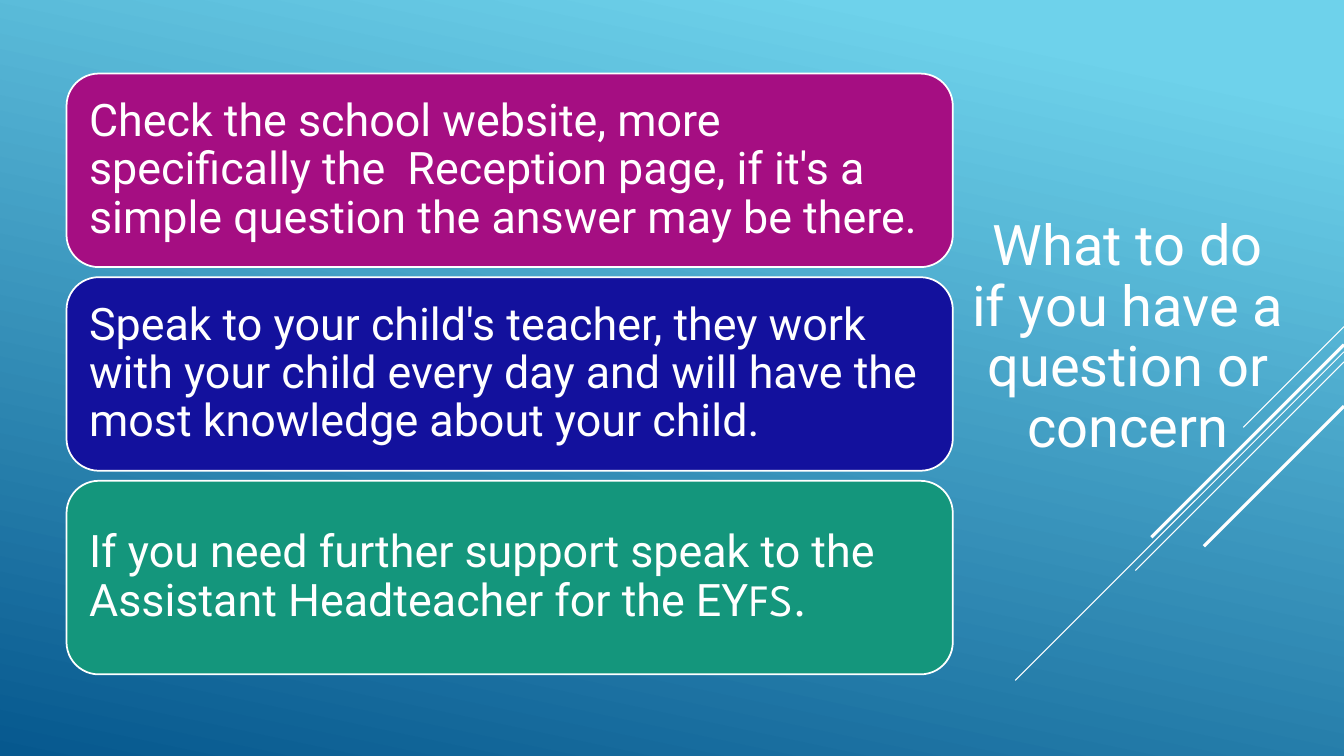
"""Build the slide on what to do with a question or concern."""
from dataclasses import dataclass

from lxml import etree
from pptx import Presentation
from pptx.dml.color import RGBColor
from pptx.enum.shapes import MSO_CONNECTOR, MSO_SHAPE
from pptx.enum.text import MSO_ANCHOR, PP_ALIGN
from pptx.oxml.ns import qn
from pptx.util import Inches, Pt

RECTANGLE = MSO_SHAPE.RECTANGLE
ROUNDED = MSO_SHAPE.ROUNDED_RECTANGLE
STRAIGHT = MSO_CONNECTOR.STRAIGHT
MIDDLE = MSO_ANCHOR.MIDDLE
LEFT, CENTER = PP_ALIGN.LEFT, PP_ALIGN.CENTER


@dataclass(frozen=True)
class Theme:
    """Colours, fonts and sizes of the slide."""
    sky: str = "6ED2EB"
    deep: str = "06588E"
    white: str = "FFFFFF"
    magenta: str = "A50E82"
    navy: str = "13119D"
    green: str = "14967C"
    font: str = "Roboto"
    accent_font: str = "League Spartan"
    title_size: int = 40
    step_size: int = 32
    outline: float = 1.25
    thin: float = 0.75
    thick: float = 2.25


THEME = Theme()
SLIDE_WIDTH, SLIDE_HEIGHT = 13.33, 7.5
STEP_LEFT, STEP_TOP, STEP_WIDTH, STEP_HEIGHT = 0.66, 0.73, 8.79, 1.92
STEP_PITCH = 2.02
TITLE = "What to do if you have a question or concern"
STEPS = [
    (THEME.magenta, "Check the school website, more specifically the  Reception page, "
     "if it's a simple question the answer may be there.", ""),
    (THEME.navy, "Speak to your child's teacher, they work with your child every day "
     "and will have the most knowledge about your child.", ""),
    (THEME.green, "If you need further support speak to the Assistant Headteacher "
     "for the EY", "FS."),
]
RAYS = [
    (3.24, 1.0, THEME.thin),
    (3.49, 3.26, THEME.thin),
    (3.59, 2.07, THEME.thin),
    (3.42, 1.91, THEME.thick),
    (4.03, 1.39, THEME.thick),
]


def rgb(colour):
    """Turn a hex string into a colour."""
    return RGBColor.from_string(colour)


def add_backdrop(slide):
    """Cover the slide with the blue gradient."""
    backdrop = slide.shapes.add_shape(
        RECTANGLE, 0, 0, Inches(SLIDE_WIDTH), Inches(SLIDE_HEIGHT))
    backdrop.shadow.inherit = False
    backdrop.line.fill.background()
    backdrop.fill.gradient()
    backdrop.fill.gradient_angle = 258
    stops = [(0.1, THEME.sky), (1, THEME.deep)]
    for stop, (position, colour) in zip(backdrop.fill.gradient_stops, stops):
        stop.position = position
        stop.color.rgb = rgb(colour)


def add_ray(slide, top, reach, weight):
    """Draw a 45-degree line down and left from the right edge."""
    ray = slide.shapes.add_connector(
        STRAIGHT, Inches(SLIDE_WIDTH), Inches(top),
        Inches(SLIDE_WIDTH - reach), Inches(top + reach))
    ray.line.color.rgb = rgb(THEME.white)
    ray.line.width = Pt(weight)
    etree.SubElement(ray._element.spPr, qn("a:effectLst"))


def write_text(frame, text, size, alignment):
    """Fill a text frame with one white paragraph and return it."""
    frame.word_wrap = True
    frame.vertical_anchor = MIDDLE
    paragraph = frame.paragraphs[0]
    paragraph.alignment = alignment
    paragraph.line_spacing = 0.9
    paragraph.font.name = THEME.font
    paragraph.font.size = Pt(size)
    paragraph.font.color.rgb = rgb(THEME.white)
    paragraph.add_run().text = text
    return paragraph


def add_title(slide):
    """Place the title on the right."""
    title = slide.shapes.add_textbox(
        Inches(9.52), Inches(1.58), Inches(3.33), Inches(3.55))
    write_text(title.text_frame, TITLE, THEME.title_size, CENTER)


def add_step(slide, top, colour, text, accent):
    """Add a rounded card, ending in the accent font where given."""
    card = slide.shapes.add_shape(
        ROUNDED, Inches(STEP_LEFT), Inches(top), Inches(STEP_WIDTH), Inches(STEP_HEIGHT))
    card.shadow.inherit = False
    card.fill.solid()
    card.fill.fore_color.rgb = rgb(colour)
    card.line.color.rgb = rgb(THEME.white)
    card.line.width = Pt(THEME.outline)
    frame = card.text_frame
    frame.margin_left = frame.margin_right = Inches(0.13)
    frame.margin_top = frame.margin_bottom = Inches(0.13)
    paragraph = write_text(frame, text, THEME.step_size, LEFT)
    if accent:
        ending = paragraph.add_run()
        ending.text = accent
        ending.font.name = THEME.accent_font


def main():
    """Build and save the slide."""
    presentation = Presentation()
    presentation.slide_width = Inches(SLIDE_WIDTH)
    presentation.slide_height = Inches(SLIDE_HEIGHT)
    slide = presentation.slides.add_slide(presentation.slide_layouts[6])
    add_backdrop(slide)
    for top, reach, weight in RAYS:
        add_ray(slide, top, reach, weight)
    add_title(slide)
    for row, (colour, text, accent) in enumerate(STEPS):
        add_step(slide, STEP_TOP + row * STEP_PITCH, colour, text, accent)
    presentation.save("out.pptx")


if __name__ == "__main__":
    main()
